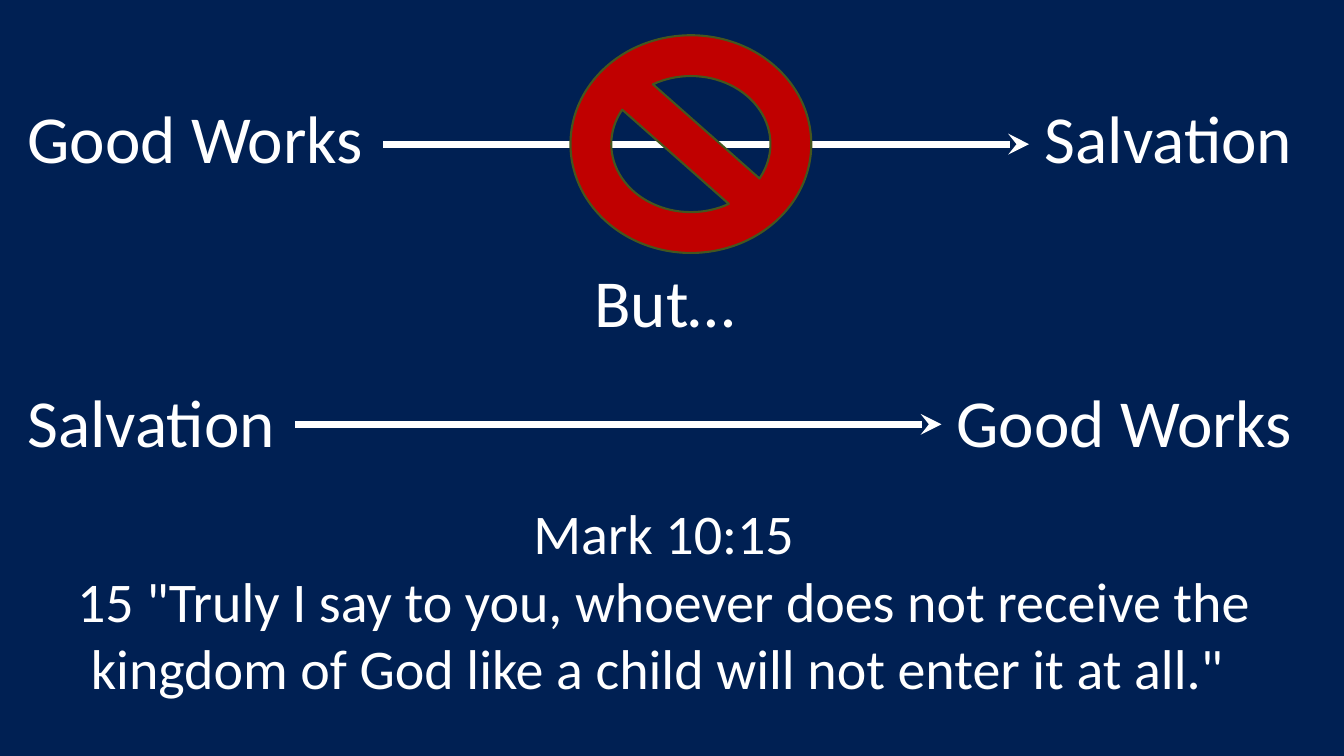
from lxml.etree import SubElement
from pptx import Presentation
from pptx.dml.color import RGBColor
from pptx.enum.shapes import MSO_CONNECTOR as Connector, MSO_SHAPE as Shape
from pptx.enum.text import MSO_AUTO_SIZE as AutoSize, PP_ALIGN as Align
from pptx.oxml.ns import qn
from pptx.util import Pt

NAVY = RGBColor(0x00, 0x20, 0x53)
WHITE = RGBColor(0xFF, 0xFF, 0xFF)
RED = RGBColor(0xC0, 0x00, 0x00)
OLIVE = RGBColor(0x45, 0x56, 0x1E)

ROW_LEFT, ROW_WIDTH, ROW_HEIGHT = 12.5, 929, 65.5
RIGHT_TAB = 903.5
ARROW_LENGTH = 461.5

# cause, effect, row top, arrow start, arrow height
CLAIMS = [
    ("Good Works", "Salvation", 65.5, 273.6, 103),
    ("Salvation", "Good Works", 267.8, 211, 303.1),
]
VERSE = [
    "Mark 10:15",
    '15 "Truly I say to you, whoever does not receive the kingdom of God '
    'like a child will not enter it at all." ',
]


class SlideBuilder:
    font_name = "Calibri"

    def __init__(self, slide):
        self.slide = slide
        fill = slide.background.fill
        fill.solid()
        fill.fore_color.rgb = NAVY

    def text(self, lines, left, top, width, height, size, align=Align.CENTER):
        box = self.slide.shapes.add_textbox(Pt(left), Pt(top), Pt(width), Pt(height))
        frame = box.text_frame
        frame.word_wrap = True
        frame.auto_size = AutoSize.SHAPE_TO_FIT_TEXT
        frame.text = "\n".join(lines)
        font_format = {"name": self.font_name, "size": Pt(size)}
        for paragraph in frame.paragraphs:
            paragraph.alignment = align
            for run in paragraph.runs:
                for name, value in font_format.items():
                    setattr(run.font, name, value)
                run.font.color.rgb = WHITE
        return frame

    def opposed_words(self, left_word, right_word, top):
        """Put one word at each end of a row, using a right tab stop."""
        frame = self.text([f"{left_word}\t{right_word}"], ROW_LEFT, top,
                          ROW_WIDTH, ROW_HEIGHT, 48, Align.LEFT)
        properties = frame.paragraphs[0]._p.get_or_add_pPr()
        tabs = SubElement(properties, qn("a:tabLst"))
        SubElement(tabs, qn("a:tab"), pos=str(int(Pt(RIGHT_TAB))), algn="r")

    def arrow(self, left, top, length):
        connector = self.slide.shapes.add_connector(
            Connector.STRAIGHT, Pt(left), Pt(top), Pt(left + length), Pt(top))
        connector.line.color.rgb = WHITE
        connector.line.width = Pt(5)
        properties = connector._element.spPr
        SubElement(properties.find(qn("a:ln")), qn("a:tailEnd"), type="stealth")
        SubElement(properties, qn("a:effectLst"))

    def prohibition_sign(self, left, top, width, height):
        sign = self.slide.shapes.add_shape(
            Shape.NO_SYMBOL, Pt(left), Pt(top), Pt(width), Pt(height))
        sign.shadow.inherit = False
        sign.fill.solid()
        sign.fill.fore_color.rgb = RED
        sign.line.color.rgb = OLIVE
        sign.line.width = Pt(1.5)


def main():
    presentation = Presentation()
    presentation.slide_width = Pt(960)
    presentation.slide_height = Pt(540)
    builder = SlideBuilder(presentation.slides.add_slide(presentation.slide_layouts[6]))

    for cause, effect, top, arrow_left, arrow_top in CLAIMS:
        builder.opposed_words(cause, effect, top)
        builder.arrow(arrow_left, arrow_top, ARROW_LENGTH)
    builder.prohibition_sign(407.5, 25.2, 172, 155.5)
    builder.text(["But… "], 26, 182.2, 908.6, ROW_HEIGHT, 48)
    builder.text(VERSE, 33, 352.8, 882, 152.6, 40)

    presentation.save("out.pptx")


if __name__ == "__main__":
    main()
